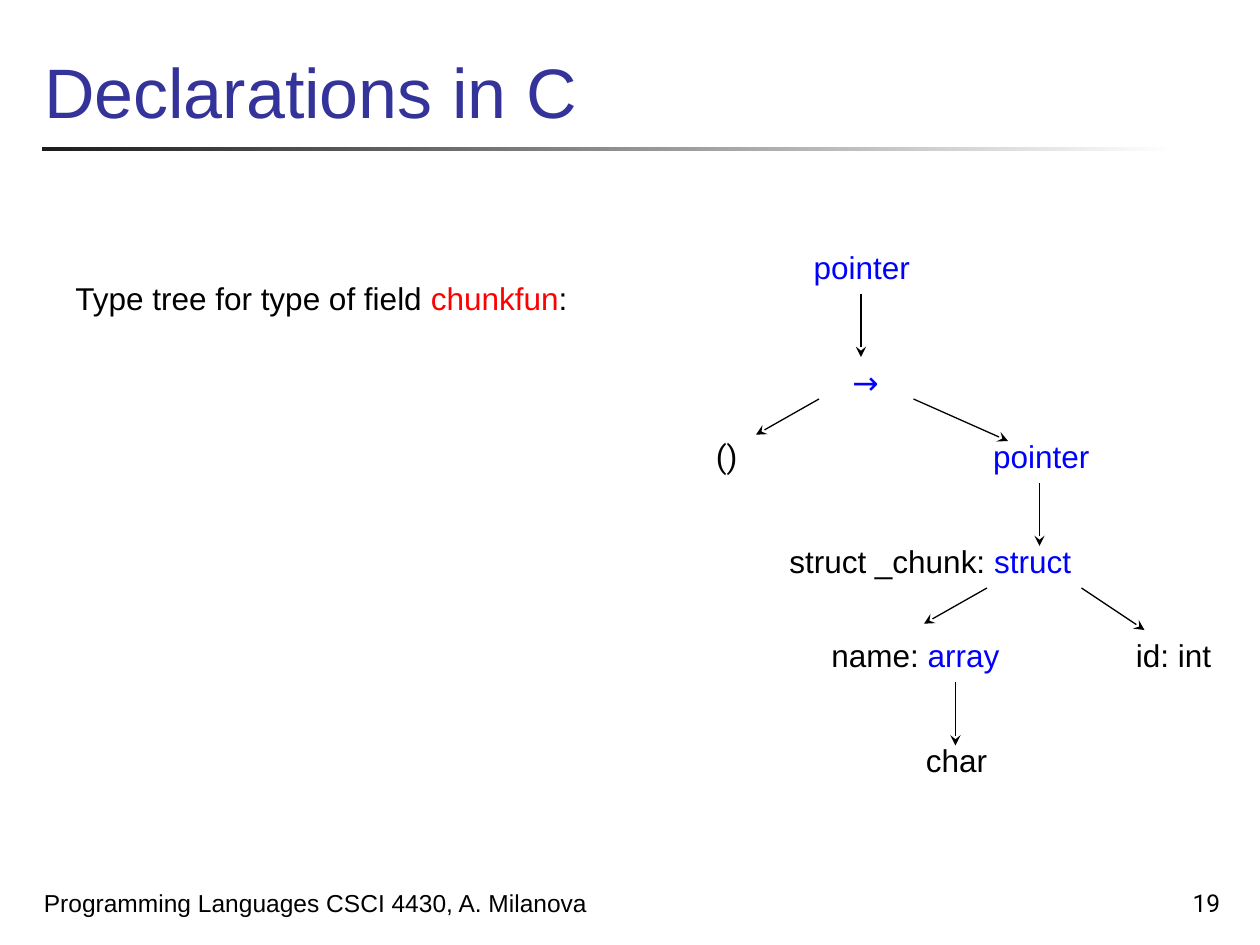
"""Build the slide showing the type tree of a C struct field."""
from lxml.etree import SubElement
from pptx import Presentation
from pptx.dml.color import RGBColor
from pptx.enum.shapes import MSO_CONNECTOR, MSO_SHAPE
from pptx.enum.text import MSO_ANCHOR, MSO_AUTO_SIZE, PP_ALIGN
from pptx.oxml.ns import qn
from pptx.util import Inches, Pt

COLORS = {"title": "333399", "text": "000000", "type": "0000FF",
          "field": "FF0000", "rule_start": "1C1C1C", "rule_end": "FFFFFF"}
COLUMNS, ROWS = 120, 90
TITLE = [("Declarations in C", "title")]
FOOTERS = [
    ((3, 82, 62, 6), [("Programming Languages CSCI 4430, A. Milanova", "text")], "Arial", PP_ALIGN.LEFT),
    ((92.4, 82, 25, 6), [("19", "text")], "Roboto", PP_ALIGN.RIGHT),
]
LABEL_HEIGHT = 4.8
LABELS = [
    (6, 26, 50.6, [("Type tree for type of field ", "text"), ("chunkfun", "field"), (":", "text")], "Arial"),
    (76.3, 23, 11.6, [("pointer", "type")], "Arial"),
    (80, 34, 5.4, [("→", "type")], "Roboto"),
    (67, 41, 4.7, [("()", "text")], "Roboto"),
    (93.4, 41, 11.6, [("pointer", "type")], "Arial"),
    (74, 51, 29.8, [("struct _chunk:", "text"), (" struct", "type")], "Arial"),
    (78, 60, 18.6, [("name: ", "text"), ("array", "type")], "Arial"),
    (107, 60, 9.7, [("id: int", "text")], "Arial"),
    (87, 70, 8.3, [("char", "text")], "Arial"),
]
ARROWS = [
    (82, 28, 82, 34), (78, 38, 72, 41.4), (87, 38, 96, 42), (99, 46, 99, 52),
    (94, 56, 88, 59.4), (103, 56, 109, 60), (91, 65, 91, 71),
]

presentation = Presentation()
presentation.slide_width, presentation.slide_height = Inches(10), Inches(7.5)
slide = presentation.slides.add_slide(presentation.slide_layouts[5])
column_width = presentation.slide_width / COLUMNS
row_height = presentation.slide_height / ROWS


def place(*cells):
    """Turn alternating column and row counts into slide lengths."""
    return [round(cell * (row_height if index % 2 else column_width))
            for index, cell in enumerate(cells)]


def color(name):
    """Look up a colour by its role."""
    return RGBColor.from_string(COLORS[name])


def write(shape, runs, size, font, align=PP_ALIGN.LEFT, anchor=MSO_ANCHOR.TOP, wrap=True):
    """Fill a shape with one paragraph of coloured runs."""
    frame = shape.text_frame
    frame.auto_size = MSO_AUTO_SIZE.NONE if wrap else MSO_AUTO_SIZE.SHAPE_TO_FIT_TEXT
    frame.word_wrap = wrap
    frame.vertical_anchor = anchor
    paragraph = frame.paragraphs[0]
    paragraph.alignment = align
    for text, role in runs:
        run = paragraph.add_run()
        run.text = text
        run.font.size, run.font.name = Pt(size), font
        run.font.color.rgb = color(role)


def add_arrow(ends):
    """Draw a thin line with a stealth head at its end."""
    arrow = slide.shapes.add_connector(MSO_CONNECTOR.STRAIGHT, *place(*ends))
    arrow.line.color.rgb = color("text")
    arrow.line.width = Pt(0.75)
    SubElement(arrow.line._get_or_add_ln(), qn("a:tailEnd"), type="stealth")
    SubElement(arrow._element.spPr, qn("a:effectLst"))


title = slide.shapes.title
title.left, title.top, title.width, title.height = place(3, 0, 114.2, 13.2)
write(title, TITLE, 40, "Arial", anchor=MSO_ANCHOR.BOTTOM)

rule = slide.shapes.add_shape(MSO_SHAPE.RECTANGLE, *place(4, 14, 108, 0.4))
rule.shadow.inherit = False
rule.line.fill.background()
rule.fill.gradient()
rule.fill.gradient_angle = 0
for stop, role in zip(rule.fill.gradient_stops, ("rule_start", "rule_end")):
    stop.color.rgb = color(role)

for box, runs, font, align in FOOTERS:
    write(slide.shapes.add_textbox(*place(*box)), runs, 14, font, align, MSO_ANCHOR.BOTTOM)
for left, top, width, runs, font in LABELS:
    label = slide.shapes.add_textbox(*place(left, top, width, LABEL_HEIGHT))
    write(label, runs, 18, font, wrap=False)
for ends in ARROWS:
    add_arrow(ends)

presentation.save("out.pptx")
